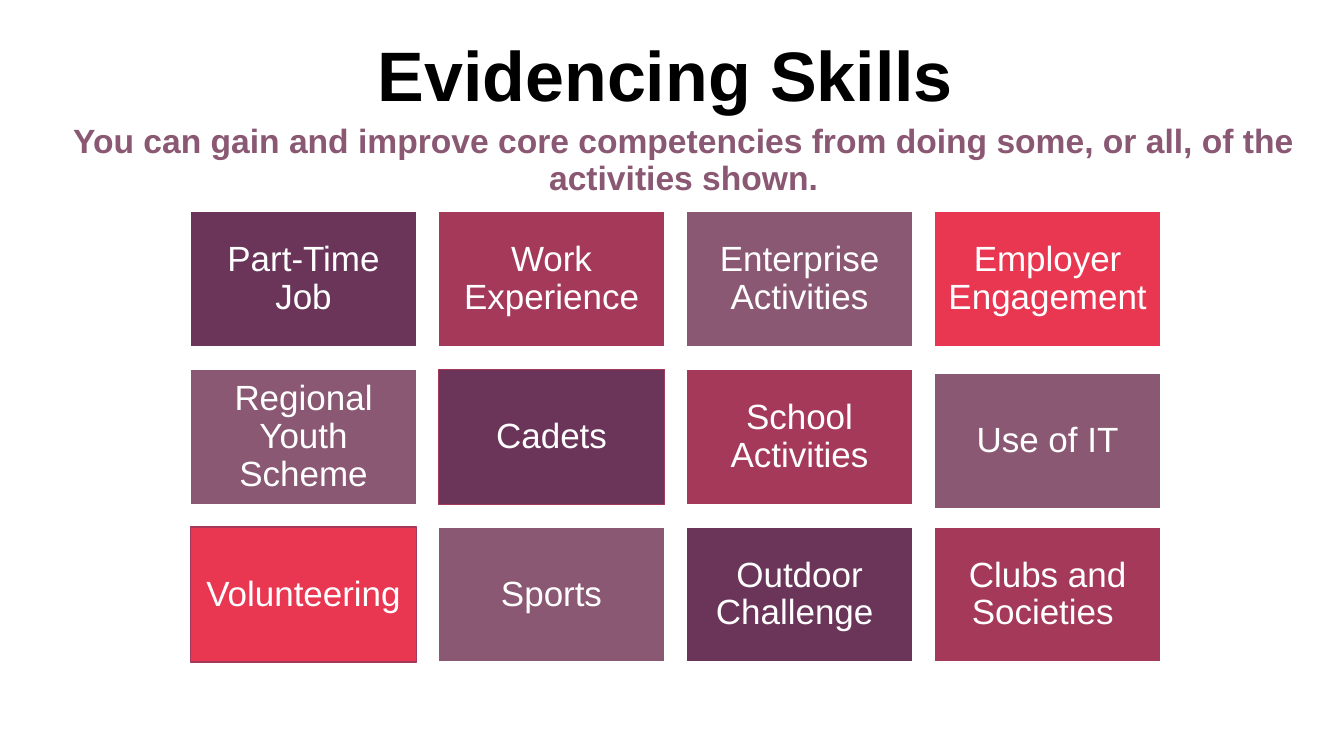
from pptx import Presentation
from pptx.dml.color import RGBColor
from pptx.enum import shapes, text
from pptx.util import Inches, Pt

BLACK = RGBColor(0x00, 0x00, 0x00)
WHITE = RGBColor(0xFF, 0xFF, 0xFF)
PLUM = RGBColor(0x6B, 0x35, 0x5A)
BERRY = RGBColor(0xA5, 0x39, 0x59)
MAUVE = RGBColor(0x8A, 0x58, 0x73)
RED = RGBColor(0xE9, 0x37, 0x52)

# Content
TITLE = "Evidencing Skills "
SUBTITLE = ("You can gain and improve core competencies from doing some, "
            "or all, of the activities shown.")
ACTIVITIES = [
    [("Part-Time Job", PLUM), ("Work Experience", BERRY),
     ("Enterprise Activities", MAUVE), ("Employer Engagement", RED)],
    [("Regional Youth Scheme", MAUVE), ("Cadets", PLUM),
     ("School Activities", BERRY), ("Use of IT", MAUVE)],
    [("Volunteering", RED), ("Sports", MAUVE),
     ("Outdoor Challenge ", PLUM), ("Clubs and Societies ", BERRY)],
]
OUTLINED = {"Cadets", "Volunteering"}
LOWERED = {"Use of IT": 0.04}

# Grid, in inches
GRID_LEFT, GRID_TOP = 1.89, 2.1
TILE_WIDTH, TILE_HEIGHT = 2.24, 1.34
COLUMN_STEP, ROW_STEP = 2.46, 1.565


def write(shape, words, size, color, bold=False,
          anchor=text.MSO_ANCHOR.TOP, margin=None):
    frame = shape.text_frame
    frame.word_wrap = True
    frame.auto_size = text.MSO_AUTO_SIZE.NONE
    frame.vertical_anchor = anchor
    if margin is not None:
        frame.margin_left = frame.margin_right = Inches(margin)
        frame.margin_top = frame.margin_bottom = Inches(margin)
    paragraph = frame.paragraphs[0]
    paragraph.alignment = text.PP_ALIGN.CENTER
    paragraph.line_spacing = 0.9
    run = paragraph.add_run()
    run.text = words
    run.font.name = "Arial"
    run.font.size = Pt(size)
    run.font.bold = bold
    run.font.color.rgb = color


def add_tile(slide, row, column, name, fill):
    tile = slide.shapes.add_shape(
        shapes.MSO_SHAPE.RECTANGLE,
        Inches(GRID_LEFT + column * COLUMN_STEP),
        Inches(GRID_TOP + row * ROW_STEP + LOWERED.get(name, 0)),
        Inches(TILE_WIDTH), Inches(TILE_HEIGHT))
    tile.shadow.inherit = False
    tile.fill.solid()
    tile.fill.fore_color.rgb = fill
    tile.line.color.rgb = BERRY if name in OUTLINED else WHITE
    tile.line.width = Pt(1)
    write(tile, name, 25, WHITE, anchor=text.MSO_ANCHOR.MIDDLE, margin=0.1)


def main():
    presentation = Presentation()
    presentation.slide_width = Inches(13.33)
    presentation.slide_height = Inches(7.5)
    slide = presentation.slides.add_slide(presentation.slide_layouts[5])

    # Title
    title = slide.shapes.title
    title.left, title.top = Inches(0.95), Inches(0.36)
    title.width, title.height = Inches(11.5), Inches(1.45)
    write(title, TITLE, 50, BLACK, bold=True)

    # Activity tiles
    for row, activities in enumerate(ACTIVITIES):
        for column, (name, fill) in enumerate(activities):
            add_tile(slide, row, column, name, fill)

    # Subtitle
    subtitle = slide.shapes.add_textbox(
        Inches(0.23), Inches(1.19), Inches(13.1), Inches(1.23))
    write(subtitle, SUBTITLE, 24, MAUVE, bold=True)

    presentation.save("out.pptx")


if __name__ == "__main__":
    main()
